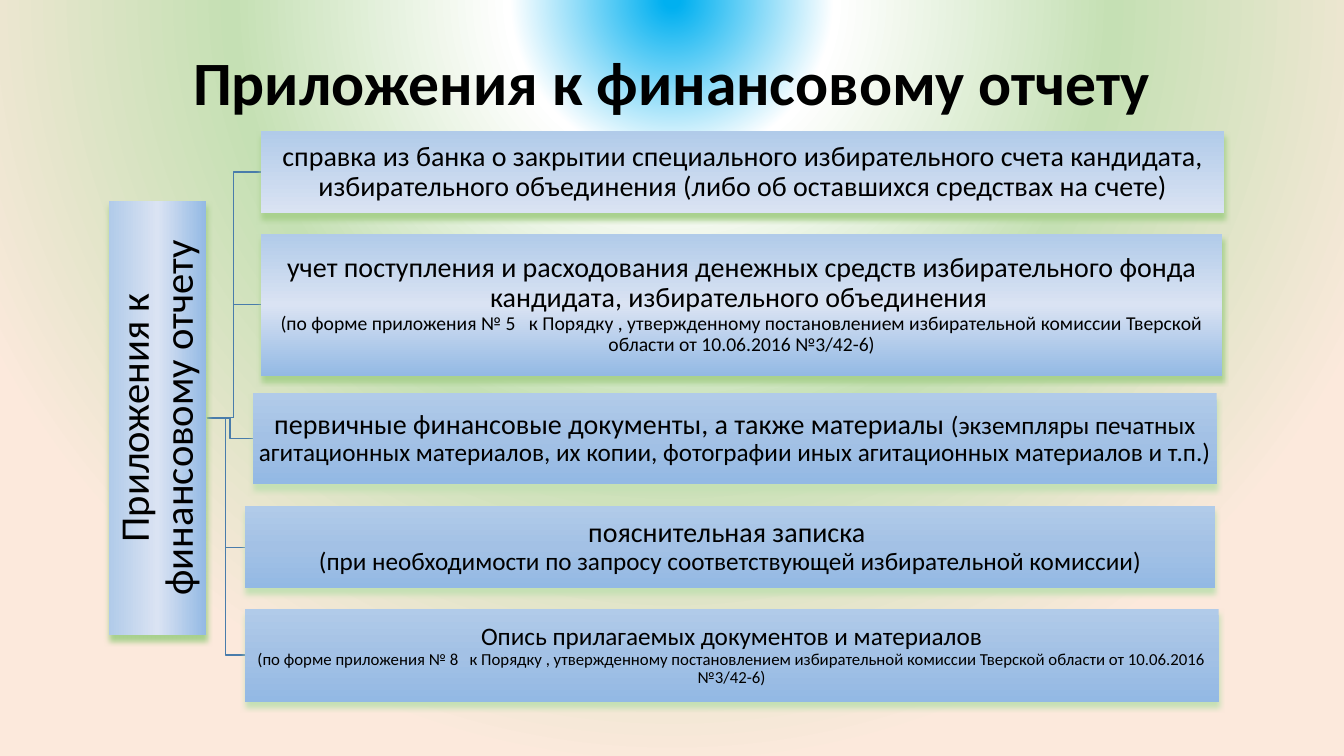
import pptx
import pptx.dml.color
import pptx.enum.shapes
import pptx.enum.text
import pptx.oxml
import pptx.oxml.ns
import pptx.util
from dataclasses import dataclass

Cm = pptx.util.Cm
qn = pptx.oxml.ns.qn
NS = pptx.oxml.ns.nsdecls("a")


@dataclass
class Theme:
    font: str = "Calibri"
    text: str = "000000"
    line: str = "497CAB"
    title: int = 44
    label: int = 29
    large: int = 20
    medium: int = 18
    small: int = 14
    tiny: int = 12
    shadow_strong: str = "A9D18E"
    shadow_soft: str = "C5E0B4"
    # Gradient stops: position in percent, colour, opacity in percent
    page: tuple = ((1, "00B0F0", 100), (21, "FFFFFF", 100),
                   (57, "C5E0B4", 100), (100, "FCE9DC", 90))
    bright: tuple = ((0, "B1CBE9", 100), (50, "DAE3F3", 100), (100, "93B9E4", 100))
    fading: tuple = ((0, "B1CBE9", 100), (100, "DAE3F3", 100), (100, "93B9E4", 100))
    plain: tuple = ((0, "B1CBE9", 100), (50, "A3C1E5", 100), (100, "93B9E4", 100))


T = Theme()


def set_gradient(fill, holder, stops, direction):
    fill.gradient()
    old = next(holder.iter(qn("a:gradFill")))
    gs = "".join(
        f'<a:gs pos="{pos * 1000}"><a:srgbClr val="{color}">'
        f'<a:alpha val="{alpha * 1000}"/></a:srgbClr></a:gs>'
        for pos, color, alpha in stops)
    new = pptx.oxml.parse_xml(
        f'<a:gradFill {NS} rotWithShape="1"><a:gsLst>{gs}</a:gsLst>{direction}</a:gradFill>')
    old.getparent().replace(old, new)


def put_text(sp, parts, inset=None, bold=False):
    tf = sp.text_frame
    tf.word_wrap = True
    tf.vertical_anchor = pptx.enum.text.MSO_ANCHOR.MIDDLE
    if inset is not None:
        tf.margin_left = tf.margin_right = tf.margin_top = tf.margin_bottom = Cm(inset)
    p = tf.paragraphs[0]
    p.alignment = pptx.enum.text.PP_ALIGN.CENTER
    p.line_spacing = 0.9
    for text, size in parts:
        r = p.add_run()
        r.text = text.rstrip("\n")
        r.font.name = T.font
        r.font.size = pptx.util.Pt(size)
        r.font.bold = bold
        r.font.color.rgb = pptx.dml.color.RGBColor.from_string(T.text)
        if text.endswith("\n"):
            p.add_line_break()


prs = pptx.Presentation()
prs.slide_width, prs.slide_height = Cm(33.87), Cm(19.05)
s = prs.slides.add_slide(prs.slide_layouts[5])

# Background
set_gradient(s.background.fill, s._element, T.page,
             '<a:path path="circle"><a:fillToRect l="50000" t="-80000" r="50000" b="180000"/></a:path>')

# Title
title = s.shapes.title
title.left, title.top, title.width, title.height = Cm(2.34), Cm(1.02), Cm(29.21), Cm(2.29)
put_text(title, [("Приложения к финансовому отчету", T.title)], bold=True)

# Root label and its branches: left, top, width, height, rotation, stops, shadow, inset, text
root = (-1.5, 9.3, 10.95, 2.46, 270, T.bright, T.shadow_strong, 0.05,
        [("Приложения к финансовому отчету", T.label)])
branches = [
    (6.58, 3.3, 24.28, 2.08, 0, T.fading, T.shadow_strong, 0.03,
     [("справка из банка о закрытии специального избирательного счета кандидата, "
       "избирательного объединения (либо об оставшихся средствах на счете)", T.large)]),
    (6.58, 5.89, 24.23, 3.58, 0, T.bright, T.shadow_strong, 0.03,
     [("учет поступления и расходования денежных средств избирательного фонда "
       "кандидата, избирательного объединения \n", T.large),
      ("(по форме приложения № 5   к Порядку , утвержденному постановлением "
       "избирательной комиссии Тверской области от 10.06.2016 №3/42-6)", T.small)]),
    (6.38, 9.91, 24.28, 2.29, 0, T.plain, T.shadow_soft, 0.03,
     [("первичные финансовые документы, а также материалы ", T.large),
      ("(экземпляры печатных агитационных материалов, их копии, фотографии иных "
       "агитационных материалов и т.п.)", T.medium)]),
    (6.17, 12.75, 24.46, 2.08, 0, T.plain, T.shadow_soft, 0.03,
     [("пояснительная записка \n", T.large),
      ("(при необходимости по запросу соответствующей избирательной комиссии)", T.medium)]),
    (6.17, 15.34, 24.54, 2.34, 0, T.plain, T.shadow_soft, 0.03,
     [("Опись прилагаемых документов и материалов\n", T.medium),
      ("(по форме приложения № 8   к Порядку , утвержденному постановлением "
       "избирательной комиссии Тверской области от 10.06.2016 №3/42-6)", T.tiny)]),
]

# Elbow lines from the right edge of the turned label to each branch
root_x = root[0] + (root[2] + root[3]) / 2
root_y = root[1] + root[3] / 2
for left, top, width, height, *rest in branches:
    cn = s.shapes.add_connector(pptx.enum.shapes.MSO_CONNECTOR.ELBOW,
                                Cm(root_x), Cm(root_y), Cm(left), Cm(top + height / 2))
    cn.line.color.rgb = pptx.dml.color.RGBColor.from_string(T.line)
    cn.line.width = pptx.util.Pt(1)
    cn._element.spPr.append(pptx.oxml.parse_xml(f"<a:effectLst {NS}/>"))

# Boxes
for left, top, width, height, rotation, stops, shadow, inset, parts in [root] + branches:
    sp = s.shapes.add_shape(pptx.enum.shapes.MSO_SHAPE.RECTANGLE,
                            Cm(left), Cm(top), Cm(width), Cm(height))
    sp.rotation = rotation
    set_gradient(sp.fill, sp._element, stops, '<a:lin ang="5400000" scaled="0"/>')
    sp.line.fill.background()
    sp.shadow.inherit = False
    sp._element.spPr.find(qn("a:effectLst")).append(pptx.oxml.parse_xml(
        f'<a:outerShdw {NS} blurRad="50800" dist="50800" dir="5400000" rotWithShape="0">'
        f'<a:srgbClr val="{shadow}"/></a:outerShdw>'))
    put_text(sp, parts, inset=inset)

prs.save("out.pptx")
